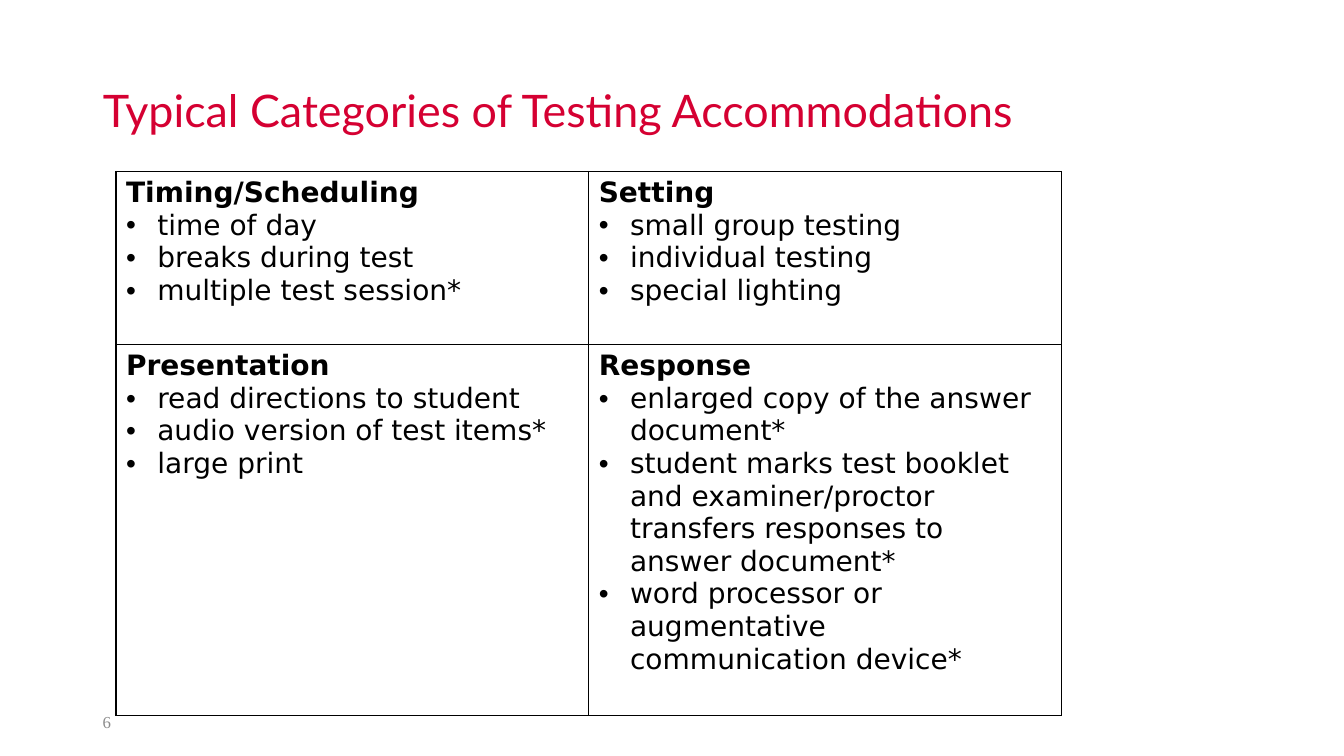
import pptx
import pptx.dml.color
import pptx.enum.text
import pptx.oxml
import pptx.oxml.ns
import pptx.util

RED, BLACK, GRAY = "D50032", "000000", "8C8C8C"
CATEGORIES = [
    [("Timing/Scheduling",
      ["time of day", "breaks during test", "multiple test session*"]),
     ("Setting",
      ["small group testing", "individual testing", "special lighting"])],
    [("Presentation",
      ["read directions to student", "audio version of test items*", "large print"]),
     ("Response",
      ["enlarged copy of the answer document*",
       "student marks test booklet and examiner/proctor transfers responses"
       " to answer document*",
       "word processor or augmentative communication device*"])],
]


def color(hex_string):
    return pptx.dml.color.RGBColor.from_string(hex_string)


def element(xml):
    """Parse one DrawingML element written with the a: prefix."""
    head, mark, rest = xml.partition(" ")
    return pptx.oxml.parse_xml(f'{head} {pptx.oxml.ns.nsdecls("a")}{mark}{rest}')


class Deck:
    """Style and current slide; lengths are percentages of the slide's size."""

    title_font, body_font, number_font = "Lato", "DejaVu Sans", "Times New Roman"
    indent = pptx.util.Inches(0.31)

    def __init__(self):
        self.prs = pptx.Presentation()
        self.prs.slide_width = pptx.util.Inches(13.33)
        self.prs.slide_height = pptx.util.Inches(7.5)
        self.slide = self.prs.slides.add_slide(self.prs.slide_layouts[5])

    def x(self, share):
        return round(self.prs.slide_width * share / 100)

    def y(self, share):
        return round(self.prs.slide_height * share / 100)

    def run(self, p, text, font, size, hex_string, bold=False):
        r = p.add_run()
        r.text = text
        r.font.name, r.font.size, r.font.bold = font, pptx.util.Pt(size), bold
        r.font.color.rgb = color(hex_string)

    def middle(self, tf):
        tf.word_wrap = True
        tf.auto_size = pptx.enum.text.MSO_AUTO_SIZE.NONE
        tf.vertical_anchor = pptx.enum.text.MSO_ANCHOR.MIDDLE

    def title(self, text, left, top, width, height):
        sp = self.slide.shapes.title
        sp.left, sp.top = self.x(left), self.y(top)
        sp.width, sp.height = self.x(width), self.y(height)
        self.middle(sp.text_frame)
        p = sp.text_frame.paragraphs[0]
        p.alignment = pptx.enum.text.PP_ALIGN.LEFT
        p.line_spacing = 0.9
        self.run(p, text, self.title_font, 32, RED)

    def number(self, text, left, top, width, height):
        sp = self.slide.shapes.add_textbox(
            self.x(left), self.y(top), self.x(width), self.y(height))
        self.middle(sp.text_frame)
        self.run(sp.text_frame.paragraphs[0], text, self.number_font, 12, GRAY)

    def bullet(self, p):
        pPr = p._p.get_or_add_pPr()
        pPr.set("marL", str(self.indent))
        pPr.set("indent", str(-self.indent))
        pPr.append(element(f'<a:buClr ><a:srgbClr val="{BLACK}"/></a:buClr>'))
        pPr.append(element('<a:buFont typeface="Arial"/>'))
        pPr.append(element('<a:buChar char="•"/>'))

    def cell(self, cell, heading, items):
        tcPr = cell._tc.get_or_add_tcPr()
        for side in "LRTB":
            tcPr.append(element(
                f'<a:ln{side} w="{pptx.util.Pt(1)}"><a:solidFill>'
                f'<a:srgbClr val="{BLACK}"/></a:solidFill></a:ln{side}>'))
        cell.fill.background()
        tf = cell.text_frame
        self.run(tf.paragraphs[0], heading, self.body_font, 20, BLACK, bold=True)
        for item in items:
            p = tf.add_paragraph()
            self.bullet(p)
            self.run(p, item, self.body_font, 20, BLACK)

    def table(self, rows, left, top, width, heights):
        table = self.slide.shapes.add_table(
            len(rows), len(rows[0]), self.x(left), self.y(top),
            self.x(width), self.y(sum(heights))).table
        table.first_row = table.horz_banding = False
        for i, row in enumerate(rows):
            table.rows[i].height = self.y(heights[i])
            for j, (heading, items) in enumerate(row):
                self.cell(table.cell(i, j), heading, items)


def main():
    deck = Deck()
    deck.title("Typical Categories of Testing Accommodations", 6.9, 5.33, 86.25, 19.33)
    deck.table(CATEGORIES, 8.63, 22.67, 70.35, [22.93, 49.07])
    deck.number("6", 6.9, 92.8, 22.5, 5.33)
    deck.prs.save("out.pptx")


if __name__ == "__main__":
    main()
